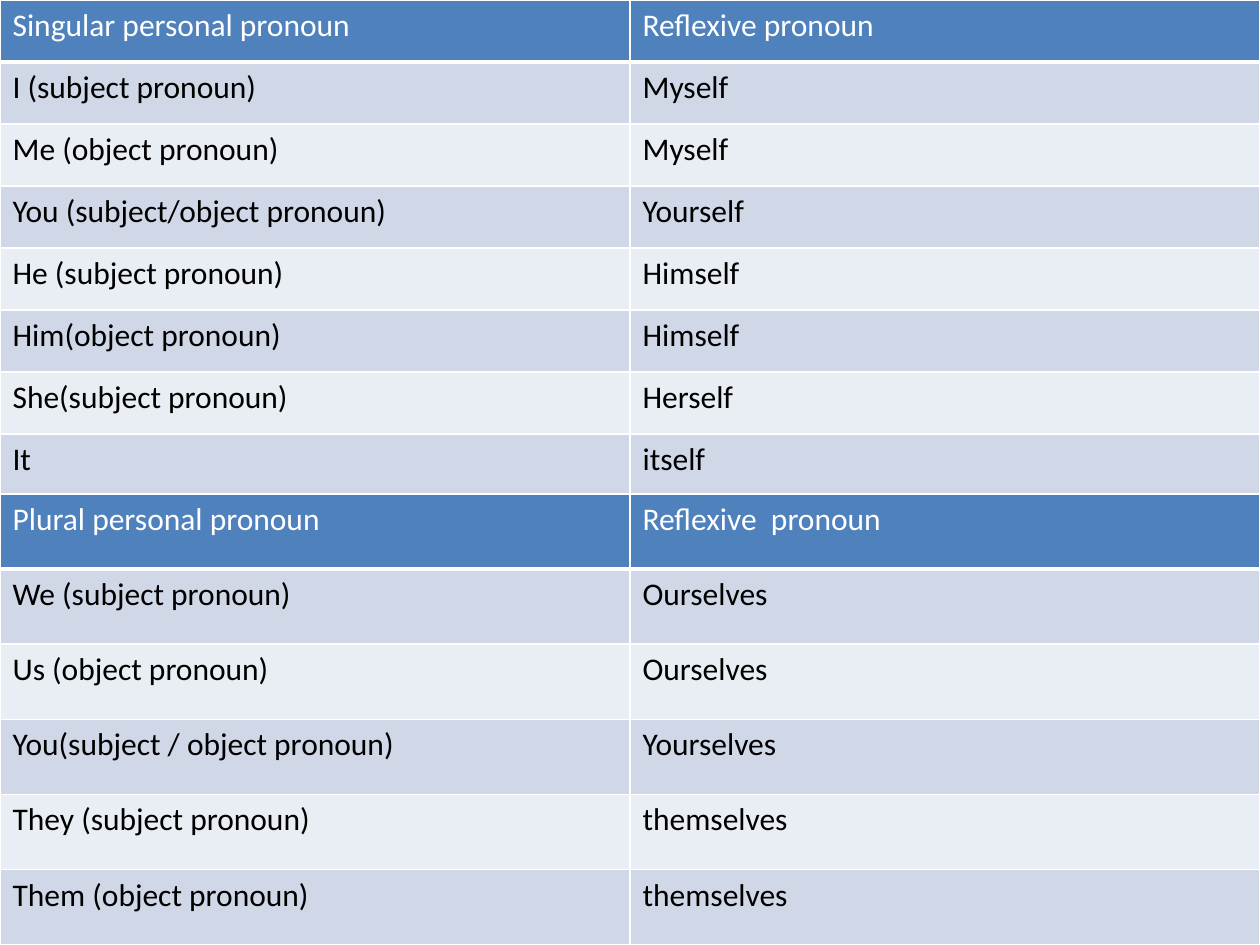
from lxml.etree import SubElement
from pptx import Presentation
from pptx.dml.color import RGBColor
from pptx.oxml.ns import qn
from pptx.util import Pt

WIDTH, HEIGHT = 720, 540
HEADER, BANDS = "4F81BD", ("E9EDF4", "D0D8E8")
WHITE, BLACK = "FFFFFF", "000000"

SINGULAR = [
    ("Singular personal pronoun", "Reflexive pronoun"),
    ("I (subject pronoun)", "Myself"),
    ("Me (object pronoun)", "Myself"),
    ("You (subject/object pronoun)", "Yourself"),
    ("He (subject pronoun)", "Himself"),
    ("Him(object pronoun)", "Himself"),
    ("She(subject pronoun)", "Herself"),
    ("It", "itself"),
]
PLURAL = [
    ("Plural personal pronoun", "Reflexive  pronoun"),
    ("We (subject pronoun)", "Ourselves"),
    ("Us (object pronoun)", "Ourselves"),
    ("You(subject / object pronoun)", "Yourselves"),
    ("They (subject pronoun)", "themselves"),
    ("Them (object pronoun)", "themselves"),
]
TABLES = [(SINGULAR, 0, 283.68), (PLURAL, 282.24, 257.76)]


def rgb(color):
    return RGBColor.from_string(color)


def set_borders(cell, bottom):
    tc_pr = cell._tc.get_or_add_tcPr()
    sides = (("lnL", 1), ("lnR", 1), ("lnT", 1), ("lnB", bottom))
    for i, (side, width) in enumerate(sides):
        ln = SubElement(tc_pr, qn(f"a:{side}"), w=str(Pt(width)))
        fill = SubElement(ln, qn("a:solidFill"))
        SubElement(fill, qn("a:srgbClr"), val=WHITE)
        tc_pr.insert(i, ln)


def fill_cell(cell, text, row):
    cell.fill.solid()
    cell.fill.fore_color.rgb = rgb(BANDS[row % 2] if row else HEADER)
    set_borders(cell, 1 if row else 3)
    cell.text = text
    font = cell.text_frame.paragraphs[0].font
    font.name, font.size, font.bold = "Calibri", Pt(18), False
    font.color.rgb = rgb(BLACK if row else WHITE)


def add_pronoun_table(s, rows, top, height):
    table = s.shapes.add_table(len(rows), 2, 0, Pt(top), Pt(WIDTH), Pt(height)).table
    for r, texts in enumerate(rows):
        table.rows[r].height = Pt(height / len(rows))
        for c, text in enumerate(texts):
            fill_cell(table.cell(r, c), text, r)


prs = Presentation()
prs.slide_width, prs.slide_height = Pt(WIDTH), Pt(HEIGHT)
s = prs.slides.add_slide(prs.slide_layouts[6])
for rows, top, height in TABLES:
    add_pronoun_table(s, rows, top, height)
prs.save("out.pptx")
